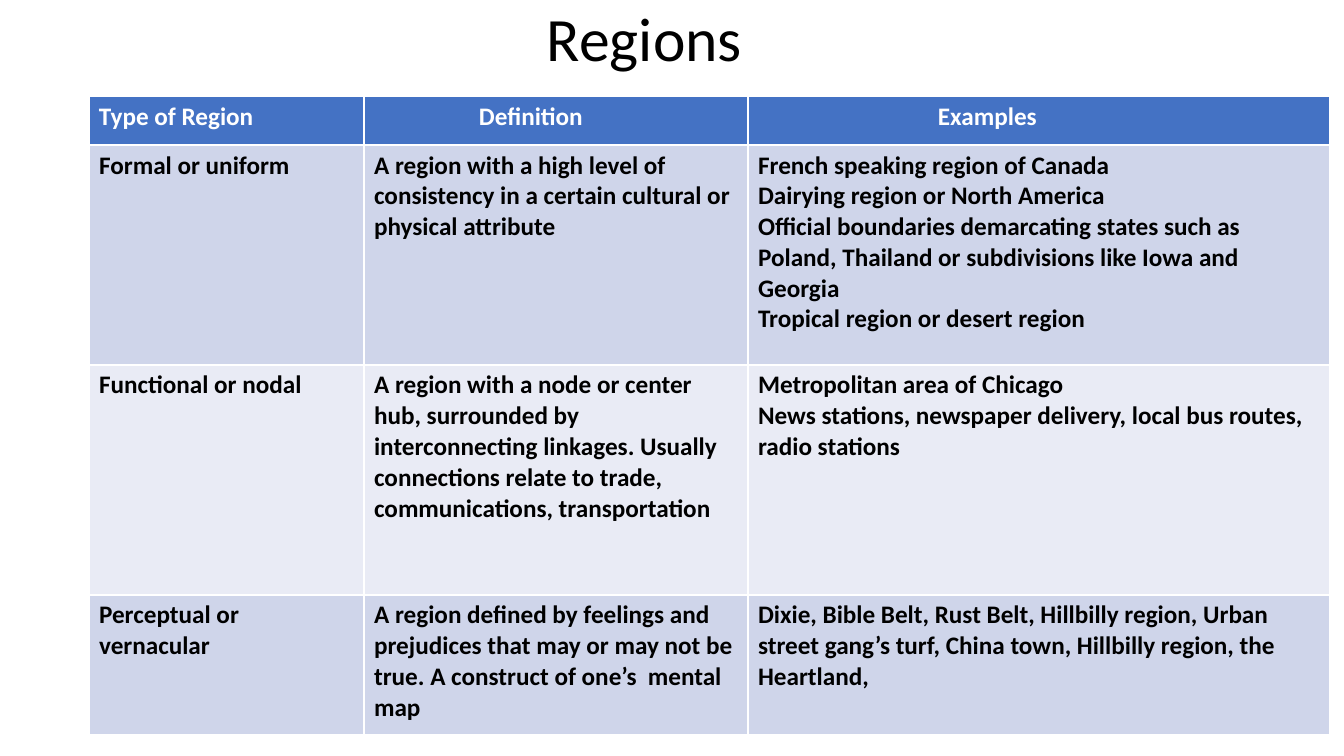
"""Build the Regions slide: a title above a table of region types."""
from pptx import Presentation
from pptx.dml.color import RGBColor
from pptx.enum.text import MSO_ANCHOR
from pptx.oxml import parse_xml
from pptx.oxml.ns import nsdecls
from pptx.util import Pt

PX = 914400 / 100.8
COLORS = {"black": "000000", "white": "FFFFFF", "header": "4472C4",
          "odd": "CFD5EA", "even": "E9EBF5"}
COLUMNS = [275, 384, 582]
ROWS = [49, 220, 230, 140]
HEADER_INDENTS = [10, 115, 190]
REGIONS = [
    ["Type of Region", "Definition", "Examples"],
    ["Formal or uniform",
     "A region with a high level of consistency in a certain cultural or physical attribute",
     "French speaking region of Canada\n"
     "Dairying region or North America\n"
     "Official boundaries demarcating states such as Poland, Thailand or "
     "subdivisions like Iowa and Georgia\n"
     "Tropical region or desert region"],
    ["Functional or nodal",
     "A region with a node or center hub, surrounded by interconnecting linkages. "
     "Usually connections relate to trade, communications, transportation",
     "Metropolitan area of Chicago\n"
     "News stations, newspaper delivery, local bus routes, radio stations"],
    ["Perceptual or vernacular",
     "A region defined by feelings and prejudices that may or may not be true. "
     "A construct of one’s  mental map",
     "Dixie, Bible Belt, Rust Belt, Hillbilly region, Urban street gang’s turf, "
     "China town, Hillbilly region, the Heartland,"],
]


def px(n):
    return round(n * PX)


def write(tf, text, color, **font):
    tf.text = text
    for p in tf.paragraphs:
        for r in p.runs:
            for name, value in {"name": "Calibri", **font}.items():
                setattr(r.font, name, value)
            r.font.color.rgb = RGBColor.from_string(COLORS[color])


prs = Presentation()
prs.slide_width, prs.slide_height = px(1344), px(756)
s = prs.slides.add_slide(prs.slide_layouts[6])

title = s.shapes.add_textbox(px(151), 0, px(1058), px(84))
tf = title.text_frame
tf.word_wrap = True
tf.vertical_anchor = MSO_ANCHOR.MIDDLE
tf.margin_left = px(396)
write(tf, "Regions", "black", size=Pt(44))
tf.paragraphs[0].line_spacing = 0.9

table = s.shapes.add_table(len(ROWS), len(COLUMNS), px(89), px(96),
                           px(sum(COLUMNS)), px(sum(ROWS))).table
for column, width in zip(table.columns, COLUMNS):
    column.width = px(width)
for row, height in zip(table.rows, ROWS):
    row.height = px(height)

for i, texts in enumerate(REGIONS):
    fill = "header" if i == 0 else "odd" if i % 2 else "even"
    for j, text in enumerate(texts):
        cell = table.cell(i, j)
        write(cell.text_frame, text, "black" if i else "white", size=Pt(18), bold=True)
        if i == 0:
            cell.margin_left = px(HEADER_INDENTS[j])
        tcPr = cell._tc.get_or_add_tcPr()
        for side in "LRTB":
            tcPr.append(parse_xml(
                f'<a:ln{side} {nsdecls("a")} w="12700"><a:solidFill>'
                f'<a:srgbClr val="{COLORS["white"]}"/></a:solidFill></a:ln{side}>'))
        cell.fill.solid()
        cell.fill.fore_color.rgb = RGBColor.from_string(COLORS[fill])

prs.save("out.pptx")
